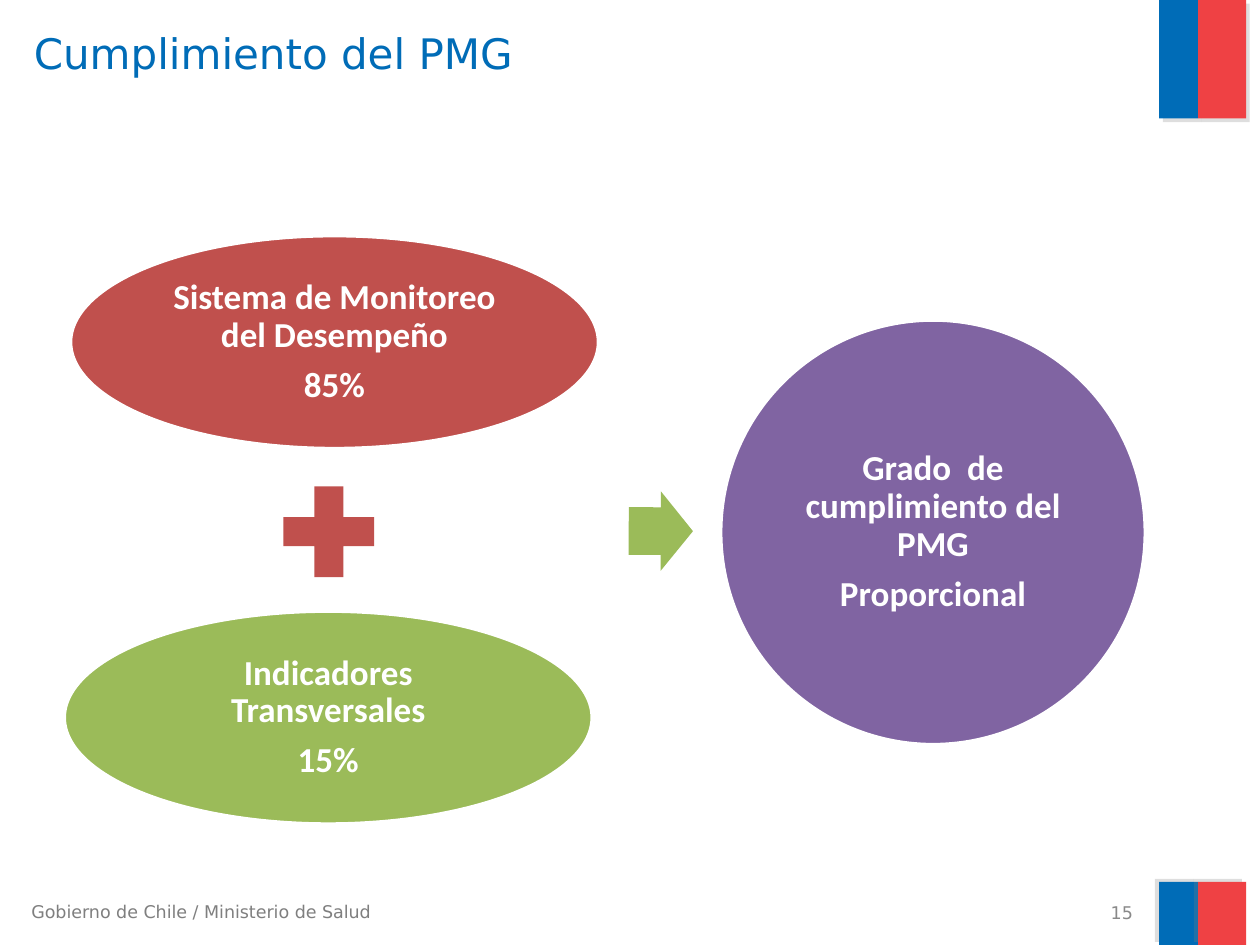
from lxml import etree
from pptx import Presentation
from pptx.dml.color import RGBColor
from pptx.enum.shapes import MSO_SHAPE
from pptx.enum.text import MSO_ANCHOR, PP_ALIGN
from pptx.oxml.ns import qn
from pptx.util import Inches, Pt

RECT, OVAL = MSO_SHAPE.RECTANGLE, MSO_SHAPE.OVAL
PLUS, ARROW = MSO_SHAPE.MATH_PLUS, MSO_SHAPE.RIGHT_ARROW
TOP, MIDDLE = MSO_ANCHOR.TOP, MSO_ANCHOR.MIDDLE
LEFT, CENTER, RIGHT = PP_ALIGN.LEFT, PP_ALIGN.CENTER, PP_ALIGN.RIGHT

COLORS = {
    "blue": "006CB7", "flag_red": "EF4144", "red": "C0504D",
    "green": "9BBB59", "purple": "8064A2", "white": "FFFFFF",
    "gray": "7F7F7F", "pale": "898989", "shade": "808080",
}


def rgb(name):
    """Return the named colour."""
    return RGBColor.from_string(COLORS[name])


def add_form(slide, kind, box, color, edge=False):
    """Add a filled preset shape, with a white edge if asked."""
    form = slide.shapes.add_shape(kind, *map(Inches, box))
    form.shadow.inherit = False
    form.fill.solid()
    form.fill.fore_color.rgb = rgb(color)
    if edge:
        form.line.color.rgb = rgb("white")
        form.line.width = Pt(2)
    else:
        form.line.fill.background()
    return form


def add_shade(form, angle):
    """Give a shape a soft grey shadow cast at an angle in degrees."""
    effects = form._element.spPr.find(qn("a:effectLst"))
    shadow = etree.SubElement(effects, qn("a:outerShdw"), dist=str(Pt(3)),
                              dir=str(angle * 60000), algn="ctr", rotWithShape="0")
    color = etree.SubElement(shadow, qn("a:srgbClr"), val=COLORS["shade"])
    etree.SubElement(color, qn("a:alpha"), val="25000")


def add_flag(slide, top, height, angle):
    """Add a blue and red band at the right side."""
    for left, width, color in ((9.2, 0.31, "blue"), (9.51, 0.38, "flag_red")):
        band = add_form(slide, RECT, (left, top, width, height), color)
        add_shade(band, angle)


def add_text(slide, box, lines, size, color, face="DejaVu Sans",
             align=LEFT, anchor=TOP):
    """Add a text box with one paragraph per line and return its frame."""
    frame = slide.shapes.add_textbox(*map(Inches, box)).text_frame
    frame.word_wrap = True
    frame.vertical_anchor = anchor
    frame.text = "\n".join(lines)
    for para in frame.paragraphs:
        para.alignment = align
        para.font.size = Pt(size)
        para.font.name = face
        para.font.color.rgb = rgb(color)
    return frame


def add_bubble(slide, box, color, lines):
    """Add an ellipse with bold text in its inscribed box."""
    add_form(slide, OVAL, box, color, edge=True)
    left, top, width, height = box
    inner = (left + width * 0.146, top + height * 0.146,
             width * 0.708, height * 0.708)
    frame = add_text(slide, inner, lines, 20, "white", "Calibri", CENTER, MIDDLE)
    frame.margin_left = frame.margin_right = Inches(0.03)
    frame.margin_top = frame.margin_bottom = Inches(0.03)
    for para in frame.paragraphs:
        para.font.bold = True
        para.line_spacing = 0.9
        para.space_after = Pt(7)


def main():
    """Build the slide and save it."""
    deck = Presentation()
    deck.slide_width, deck.slide_height = Inches(10), Inches(7.5)
    slide = deck.slides.add_slide(deck.slide_layouts[6])

    add_flag(slide, 0, 0.94, 45)
    add_flag(slide, 7, 0.5, 215)
    add_text(slide, (0.15, 7.1, 3.02, 0.27),
             ["Gobierno de Chile / Ministerio de Salud"], 10, "gray")
    add_text(slide, (0.17, 0.17, 8.93, 0.59), ["Cumplimiento del PMG"], 24, "blue")
    add_text(slide, (6.76, 7.14, 2.33, 0.21), ["15"], 10, "pale",
             align=RIGHT, anchor=MIDDLE)

    add_bubble(slide, (0.56, 1.87, 4.19, 1.69), "red",
               ["Sistema de Monitoreo del Desempeño", "85%"])
    add_form(slide, PLUS, (2.12, 3.73, 0.98, 0.98), "red")
    add_bubble(slide, (0.51, 4.85, 4.19, 1.69), "green",
               ["Indicadores Transversales", "15%"])
    arrow = add_form(slide, ARROW, (4.99, 3.9, 0.51, 0.63), "green")
    arrow.adjustments[0] = 0.6
    arrow.rotation = 0.2
    add_bubble(slide, (5.72, 2.54, 3.37, 3.37), "purple",
               ["Grado  de cumplimiento del PMG", "Proporcional"])
    deck.save("out.pptx")


if __name__ == "__main__":
    main()
